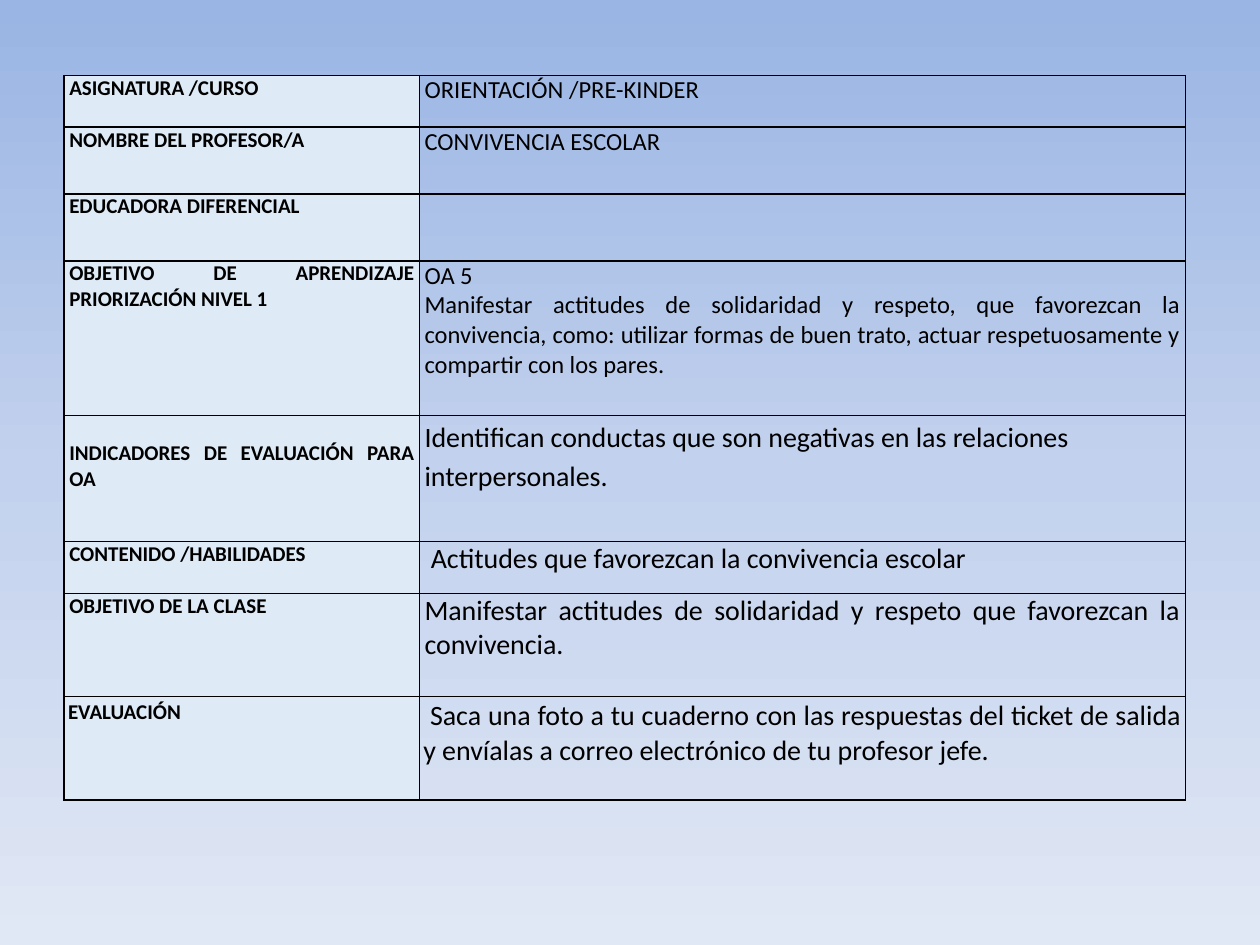
from copy import deepcopy

from lxml import etree
from pptx import Presentation
from pptx import util as u
from pptx.dml.color import RGBColor
from pptx.enum import text
from pptx.oxml import ns

HUES = {"ink": "000000", "label": "DEEAF6",
        "top": "9AB5E4", "mid": "C2D1ED", "low": "E1E8F5"}
FONT = "Calibri"
COLS = [2.82, 6.08]

# Each row: height, label, value lines, value size
ROWS = [
    (0.41, "ASIGNATURA /CURSO", ["ORIENTACIÓN /PRE-KINDER"], 14),
    (0.53, "NOMBRE DEL PROFESOR/A", ["CONVIVENCIA ESCOLAR"], 14),
    (0.53, "EDUCADORA DIFERENCIAL", [], 14),
    (1.23, "OBJETIVO DE APRENDIZAJE PRIORIZACIÓN NIVEL 1",
     ["OA 5",
      "Manifestar actitudes de solidaridad y respeto, que favorezcan la "
      "convivencia, como: utilizar formas de buen trato, actuar "
      "respetuosamente y compartir con los pares."], 14),
    (1, "INDICADORES DE EVALUACIÓN PARA OA",
     ["Identifican conductas que son negativas en las relaciones "
      "interpersonales."], 16),
    (0.41, "CONTENIDO /HABILIDADES",
     [" Actitudes que favorezcan la convivencia escolar"], 16),
    (0.82, "OBJETIVO DE LA CLASE",
     ["Manifestar actitudes de solidaridad y respeto que favorezcan la "
      "convivencia."], 16),
    (0.82, "EVALUACIÓN",
     [" Saca una foto a tu cuaderno con las respuestas del ticket de salida "
      "y envíalas a correo electrónico de tu profesor jefe."], 16),
]
GUIDE, LAST = 4, len(ROWS) - 1  # rows with their own spacing


class Deck:
    def __init__(self):
        self.prs = Presentation()
        self.prs.slide_width = u.Inches(10)
        self.prs.slide_height = u.Inches(7.5)
        self.slide = self.prs.slides.add_slide(self.prs.slide_layouts[6])

    def hue(self, name):
        return RGBColor.from_string(HUES[name])

    def back(self, names):
        """Fill the background with evenly spaced colours, top to bottom."""
        fill = self.slide.background.fill
        fill.gradient()
        fill.gradient_angle = 270
        stops = self.slide.background._cSld.find(".//" + ns.qn("a:gsLst"))
        while len(stops) < len(names):
            stops.append(deepcopy(stops[0]))
        for i, (stop, name) in enumerate(zip(fill.gradient_stops, names)):
            stop.position = i / (len(names) - 1)
            stop.color.rgb = self.hue(name)

    def grid(self, left, top, cols, highs):
        shape = self.slide.shapes.add_table(
            len(highs), len(cols), u.Inches(left), u.Inches(top),
            u.Inches(sum(cols)), u.Inches(sum(highs)))
        table = shape.table
        table.first_row = table.horz_banding = False
        for col, wide in zip(table.columns, cols):
            col.width = u.Inches(wide)
        for row, high in zip(table.rows, highs):
            row.height = u.Inches(high)
        return table

    def edge(self, cell):
        props = cell._tc.get_or_add_tcPr()
        for side in "LRTB":
            line = etree.SubElement(props, ns.qn("a:ln" + side),
                                    w=str(u.Pt(1)))
            fill = etree.SubElement(line, ns.qn("a:solidFill"))
            etree.SubElement(fill, ns.qn("a:srgbClr"), val=HUES["ink"])

    def cell(self, cell, lines, size, bold=False, fill=None,
             pad=(0.04, 0), top=None, lead=None):
        self.edge(cell)
        if fill:
            cell.fill.solid()
            cell.fill.fore_color.rgb = self.hue(fill)
        else:
            cell.fill.background()
        side, end = pad
        cell.margin_left = cell.margin_right = u.Inches(side)
        cell.margin_top = u.Inches(end if top is None else top)
        cell.margin_bottom = u.Inches(end)
        for i, line in enumerate(lines):
            frame = cell.text_frame
            para = frame.paragraphs[0] if i == 0 else frame.add_paragraph()
            if lead:
                para.line_spacing = lead
            else:
                para.alignment = text.PP_ALIGN.JUSTIFY
            run = para.add_run()
            run.text = line
            run.font.name, run.font.size = FONT, u.Pt(size)
            run.font.bold = bold
            run.font.color.rgb = self.hue("ink")


def main():
    deck = Deck()
    deck.back(["top", "mid", "low"])

    # Class plan: labels on the left, values on the right
    table = deck.grid(0.51, 0.6, COLS, [row[0] for row in ROWS])
    for i, (_, label, lines, size) in enumerate(ROWS):
        pad = (0.03, 0.02) if i == LAST else (0.04, 0)
        deck.cell(table.cell(i, 0), [label], 12, bold=True, fill="label",
                  pad=pad, top=0.2 if i == GUIDE else None)
        deck.cell(table.cell(i, 1), lines, size, pad=pad,
                  lead=1.15 if i == GUIDE else None)

    deck.prs.save("out.pptx")


if __name__ == "__main__":
    main()
